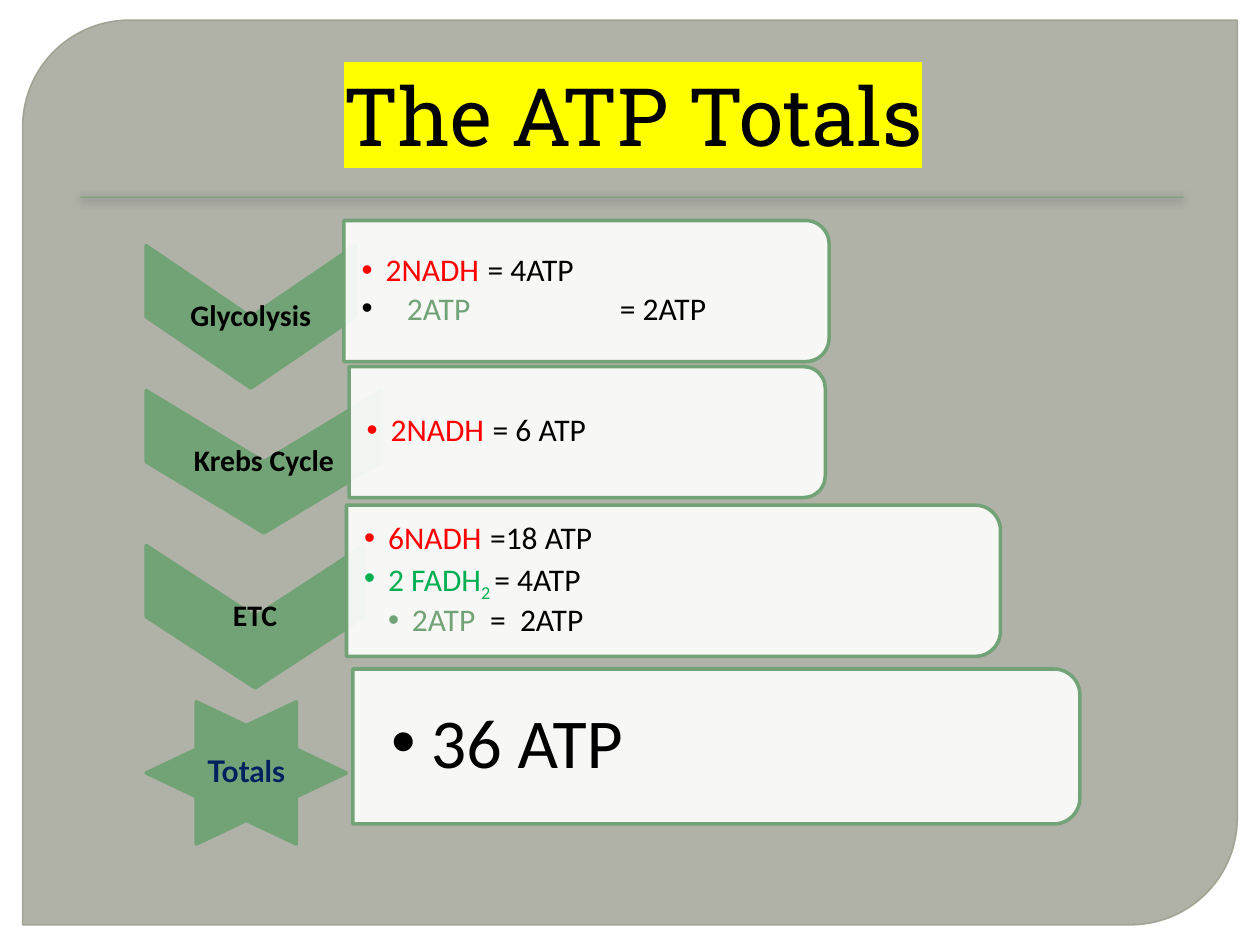
from lxml import etree
from pptx import Presentation
from pptx.dml.color import RGBColor
from pptx.enum import shapes, text
from pptx.oxml.ns import qn
from pptx.util import Inches, Pt

KIND = shapes.MSO_SHAPE
GREEN, RED, LEAF, BLACK = "72A376", "FF0000", "00B050", "000000"


def rgb(code):
    return RGBColor.from_string(code)


def sub(parent, tag, **attrs):
    node = etree.SubElement(parent, qn(tag))
    for key, val in attrs.items():
        node.set(key, str(val))
    return node


def fade(owner, percent):
    """Set the opacity of the solid fill held by a shape or line element."""
    color = owner.find(qn("a:solidFill")).find(qn("a:srgbClr"))
    sub(color, "a:alpha", val=percent * 1000)


def add_form(slide, kind, x, y, w, h, fill, line=None, width=2, turn=False):
    """Draw a shape that covers x, y, w, h even when turned by 90 degrees."""
    if turn:
        x, y, w, h = x + (w - h) / 2, y + (h - w) / 2, h, w
    form = slide.shapes.add_shape(kind, Inches(x), Inches(y), Inches(w), Inches(h))
    form.rotation = 90 if turn else 0
    form.shadow.inherit = False
    form.fill.solid()
    form.fill.fore_color.rgb = rgb(fill)
    if line:
        form.line.color.rgb = rgb(line)
        form.line.width = Pt(width)
    else:
        form.line.fill.background()
    return form


def add_box(slide, x, y, w, h, pads):
    box = slide.shapes.add_textbox(Inches(x), Inches(y), Inches(w), Inches(h))
    frame = box.text_frame
    frame.word_wrap = True
    frame.vertical_anchor = text.MSO_ANCHOR.MIDDLE
    frame.margin_left, frame.margin_right = Inches(pads[0]), Inches(pads[1])
    frame.margin_top = frame.margin_bottom = Inches(pads[1])
    return frame


def set_font(para, name, size, color=BLACK, bold=False):
    font = para.font
    font.name, font.size, font.bold = name, Pt(size), bold
    font.color.rgb = rgb(color)


def add_run(para, words, color=None, base=0):
    run = para.add_run()
    run.text = words
    if color:
        run.font.color.rgb = rgb(color)
    if base:
        run.font._element.set("baseline", str(base * 1000))
    return run


def add_label(slide, words, x, y, w, h, face="Calibri", color=BLACK):
    para = add_box(slide, x, y, w, h, (0.01, 0.01)).paragraphs[0]
    para.alignment = text.PP_ALIGN.CENTER
    para.line_spacing = 0.9
    set_font(para, face, 17, color, True)
    add_run(para, words)


def add_item(para, runs, size, bullet, left, hang, tab, first):
    para.line_spacing = 0.9
    if not first:
        para.space_before = Pt(2.7)
    props = para._p.get_or_add_pPr()
    props.set("marL", str(Inches(left)))
    props.set("indent", str(-Inches(hang)))
    sub(sub(props, "a:buClr"), "a:srgbClr", val=bullet)
    sub(props, "a:buFont", typeface="Arial")
    sub(props, "a:buChar", char="•")
    sub(sub(props, "a:tabLst"), "a:tab", pos=Inches(tab), algn="l")
    set_font(para, "Calibri", size)
    for run in runs:
        add_run(para, *run)


def add_panel(slide, x, y, w, h, items, size=18, pads=(0.14, 0.01)):
    form = add_form(slide, KIND.ROUND_2_SAME_RECTANGLE, x, y, w, h,
                    "FFFFFF", GREEN, turn=True)
    fade(form._element.spPr, 90)
    frame = add_box(slide, x, y + 0.05, w - 0.06, h - 0.11, pads)
    for i, (bullet, left, hang, tab, runs) in enumerate(items):
        para = frame.add_paragraph() if i else frame.paragraphs[0]
        add_item(para, runs, size, bullet, left, hang, tab, i == 0)


def add_frame(slide):
    back = add_form(slide, KIND.ROUND_2_DIAG_RECTANGLE, 0.18, 0.16, 9.64, 7.18,
                    "878878", "9B9F8D", 0.87)
    back.adjustments[0] = 0.118
    fade(back._element.spPr, 65)
    fade(back._element.spPr.find(qn("a:ln")), 88)
    rule = add_form(slide, KIND.RECTANGLE, 0.64, 1.56, 8.75, 0.01, GREEN)
    glow = sub(rule._element.spPr.find(qn("a:effectLst")), "a:outerShdw",
               blurRad=Pt(5), dist=Pt(1), dir=90 * 60000)
    sub(sub(glow, "a:srgbClr", val=BLACK), "a:alpha", val=75000)


def add_title(slide):
    para = add_box(slide, 0.5, 0.28, 9, 1.25, (0.1, 0.05)).paragraphs[0]
    para.alignment = text.PP_ALIGN.CENTER
    set_font(para, "Roboto Slab", 46)
    run = add_run(para, "The ATP Totals")
    sub(sub(run.font._element, "a:highlight"), "a:srgbClr", val="FFFF00")


def main():
    deck = Presentation()
    deck.slide_width, deck.slide_height = Inches(10), Inches(7.5)
    slide = deck.slides.add_slide(deck.slide_layouts[6])
    add_frame(slide)
    add_title(slide)

    # Each stage: name, chevron top and width, panel bounds, bullet items
    # Each item: bullet colour, indent, hang, tab stop, runs
    stages = [
        ("Glycolysis", 1.95, 1.66, (2.73, 1.75, 3.85, 1.12), [
            (RED, 0.19, 0.19, 1, [("2NADH ", RED), ("\t= 4ATP",)]),
            (BLACK, 0.36, 0.36, 2.05, [("2ATP ", GREEN), ("\t= 2ATP",)])]),
        ("Krebs Cycle", 3.1, 1.87, (2.77, 2.91, 3.78, 1.04), [
            (RED, 0.19, 0.19, 1, [("2NADH \t", RED), ("= 6 ATP",)])]),
        ("ETC", 4.33, 1.73, (2.75, 4.01, 5.19, 1.2), [
            (RED, 0.19, 0.19, 1, [("6NADH", RED), ("\t=18 ATP",)]),
            (LEAF, 0.19, 0.19, 1,
             [("2 FADH", LEAF), ("2 ", LEAF, -25), ("= 4ATP",)]),
            (GREEN, 0.38, 0.19, 1, [("2ATP ", GREEN), ("\t=  2ATP",)])]),
    ]
    for name, top, wide, panel, items in stages:
        spot = (1.16, top, wide, 1.13)
        add_form(slide, KIND.CHEVRON, *spot, GREEN, GREEN, turn=True)
        add_label(slide, name, *spot)
        add_panel(slide, *panel, items)

    # Totals
    add_form(slide, KIND.STAR_6_POINT, 1.16, 5.57, 1.59, 1.13, GREEN, GREEN, turn=True)
    add_label(slide, "Totals", 1.56, 5.76, 0.79, 0.75, "Lato", "002060")
    add_panel(slide, 2.8, 5.31, 5.77, 1.23,
              [(BLACK, 0.31, 0.31, 1, [("36 ATP",)])], 40, (0.31, 0.03))
    deck.save("out.pptx")


if __name__ == "__main__":
    main()
